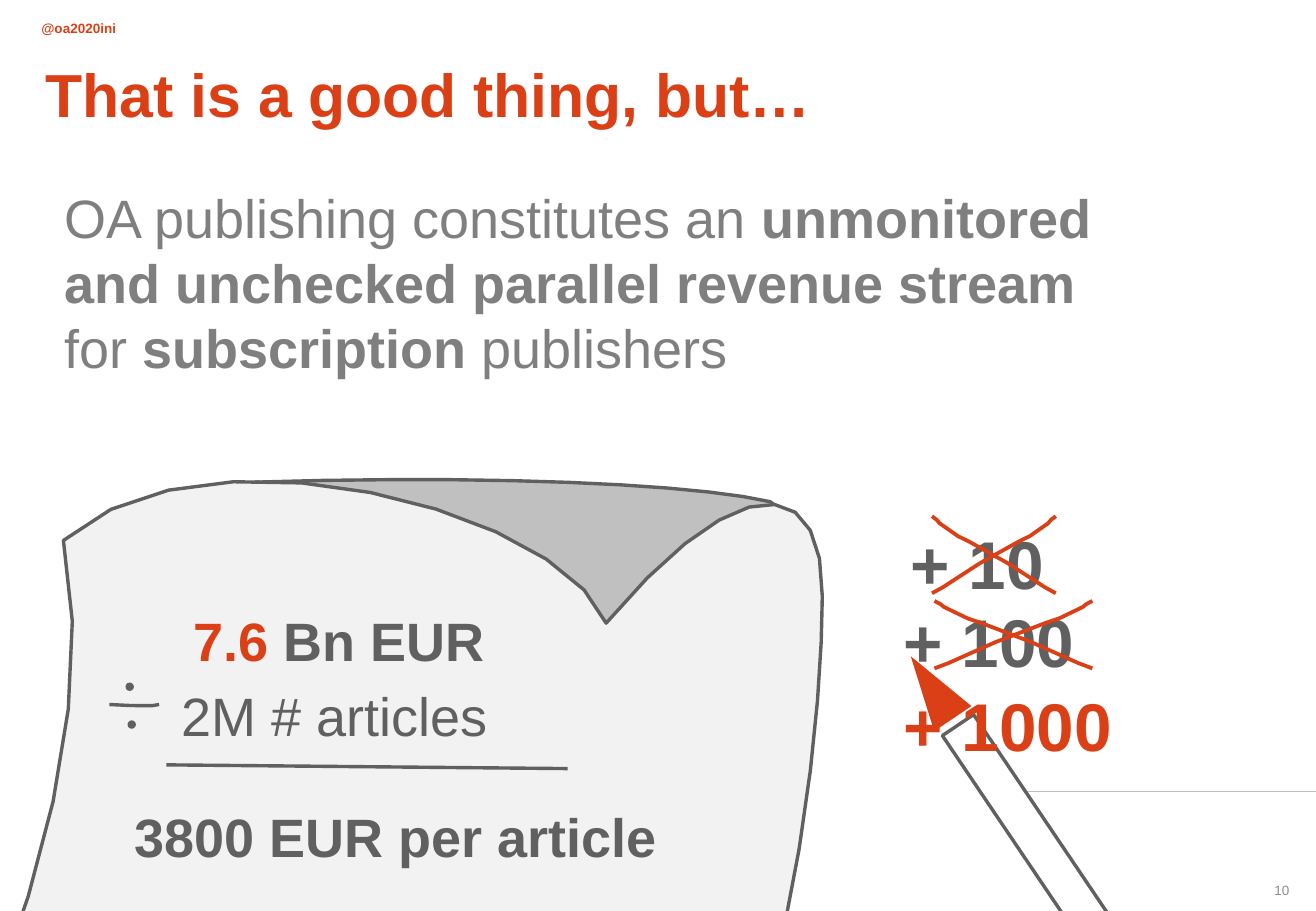
import math

import pptx
import pptx.dml.color
import pptx.enum.shapes
import pptx.enum.text
import pptx.oxml.ns
import pptx.util
from lxml import etree

Pt = pptx.util.Pt
RGBColor = pptx.dml.color.RGBColor
SHAPE = pptx.enum.shapes.MSO_SHAPE
ALIGN = pptx.enum.text.PP_ALIGN
ANCHOR = pptx.enum.text.MSO_ANCHOR

RED = RGBColor(0xDB, 0x3F, 0x16)
INK = RGBColor(0x60, 0x60, 0x60)
BODY_GREY = RGBColor(0x7F, 0x7F, 0x7F)
NUMBER_GREY = RGBColor(0x8C, 0x8C, 0x8C)
RULE_GREY = RGBColor(0xC0, 0xC0, 0xC0)
PAPER = RGBColor(0xF2, 0xF2, 0xF2)
WHITE = RGBColor(0xFF, 0xFF, 0xFF)

FLUSH = {"margin_left": 0, "margin_right": 0, "margin_top": 0, "margin_bottom": 0}

FOLD = [(151.2, 1.8), (286.6, -2.5, 410.4, 2.6, 456.5, 13.4),
        (502.6, 24.2, 432.7, 56.6, 426.2, 68.1), (403.2, 122.8), (401.8, 127.8),
        (374.4, 166.7), (366.5, 170.3), (347, 153),
        (301.7, 114.9, 278.6, 94, 228.2, 66.6),
        (132.5, 18.4), (125.3, 15.5), (104.4, 15.5)]
SHEET = [(37.6, 36.4), (69.1, 187.6, -43.9, 431.7, -133.2, 530.3), (356.4, 543.3),
         (468.7, 370.5, 487.4, 145.8, 487.4, 69.5),
         (488.2, -6.8, 434.9, -4.6, 359.3, 85.4),
         (333.4, 18.4, 119.5, -37.8, 37.6, 36.4)]
DIVISION_BAR = [(64.8, 133.6), (72.7, 134.3, 81.4, 134.3, 90, 134.3), (94.3, 133.6)]
STROKE = [(0, 1), (0.09, 0.92), (0.29, 0.73, 0.48, 0.48, 0.7, 0.33),
          (0.81, 0.25, 0.75, 0.3, 0.94, 0.09), (0.96, 0.05), (1, 0)]


def add_text(slide, box, runs, size, frame_format=None, paragraph_format=None):
    frame = slide.shapes.add_textbox(*map(Pt, box)).text_frame
    for name, value in {"word_wrap": True, **(frame_format or {})}.items():
        setattr(frame, name, value)
    paragraph = frame.paragraphs[0]
    for name, value in (paragraph_format or {}).items():
        setattr(paragraph, name, value)
    for words, color, bold in runs:
        run = paragraph.add_run()
        run.text = words.rstrip("\n")
        for name, value in {"name": "Arial", "size": Pt(size), "bold": bold}.items():
            setattr(run.font, name, value)
        run.font.color.rgb = color
        if words.endswith("\n"):
            paragraph.add_line_break()


def paint(shape, fill=None, line=None, width=2):
    shape.shadow.inherit = False
    if fill is None:
        shape.fill.background()
    else:
        shape.fill.solid()
        shape.fill.fore_color.rgb = fill
    if line is None:
        shape.line.fill.background()
    else:
        shape.line.color.rgb = line
        shape.line.width = Pt(width)


def flatten(outline):
    points = [outline[0]]
    for segment in outline[1:]:
        if len(segment) == 2:
            points.append(segment)
            continue
        start = points[-1]
        steps = max(2, min(10, round(math.dist(start, segment[4:]) / 14)))
        for t in (step / steps for step in range(1, steps + 1)):
            u = 1 - t
            points.append(tuple(
                u ** 3 * start[axis] + 3 * u * u * t * segment[axis]
                + 3 * u * t * t * segment[axis + 2] + t ** 3 * segment[axis + 4]
                for axis in (0, 1)))
    return points


def draw(slide, left, top, points, closed=False, **style):
    placed = [(Pt(left + x), Pt(top + y)) for x, y in points]
    builder = slide.shapes.build_freeform(*placed[0])
    builder.add_line_segments(placed[1:], close=closed)
    paint(builder.convert_to_shape(), **style)


def draw_rule(slide, start, end, color, width):
    rule = slide.shapes.add_connector(
        pptx.enum.shapes.MSO_CONNECTOR.STRAIGHT, *map(Pt, start + end))
    rule.line.color.rgb = color
    rule.line.width = Pt(width)
    properties = rule._element.find(pptx.oxml.ns.qn("p:spPr"))
    etree.SubElement(properties, pptx.oxml.ns.qn("a:effectLst"))


def add_frame(slide, width, height):
    add_text(slide, (24.5, 12, 60, 12.2), [("@oa2020ini", RED, True)], 8, FLUSH)
    draw_rule(slide, (602, height - 71), (width, height - 71), RULE_GREY, 0.5)
    add_text(slide, (width - 77, height - 20.9, 61.2, 13), [("10", NUMBER_GREY, False)], 8,
             {**FLUSH, "vertical_anchor": ANCHOR.BOTTOM}, {"alignment": ALIGN.RIGHT})


def add_message(slide, left, top, width):
    add_text(slide, (left, top, width, 54.7),
             [("That is a good thing, but…", RED, True)], 36)
    add_text(slide, (left + 18.2, top + 79.2, width - 18.2, 35.3),
             [("OA publishing constitutes an ", BODY_GREY, False),
              ("unmonitored\n", BODY_GREY, True),
              ("and unchecked parallel revenue stream\n", BODY_GREY, True),
              ("for ", BODY_GREY, False),
              ("subscription ", BODY_GREY, True),
              ("publishers", BODY_GREY, False)], 32, FLUSH)


def add_paper(slide, left, top):
    draw(slide, left, top, flatten(FOLD), fill=RULE_GREY, line=INK)
    draw(slide, left, top, flatten(SHEET), closed=True, fill=PAPER, line=INK)
    add_text(slide, (left + 107.5, top + 72.4, 262, 32.4),
             [("7.6 ", RED, True), ("Bn EUR", INK, True)], 32)
    add_text(slide, (left + 107.5, top + 120.6, 247.7, 38.9),
             [("2M # articles", INK, False)], 32, FLUSH)
    add_text(slide, (left + 79.9, top + 192.6, 373, 38.9),
             [("3800 EUR per article", INK, True)], 32, FLUSH)
    draw_rule(slide, (left + 98.6, top + 169.4), (left + 336.4, top + 171.6), INK, 2)
    draw(slide, left, top, flatten(DIVISION_BAR), line=INK)
    for x, y in ((74.4, 120.6), (75.6, 143)):
        dot = slide.shapes.add_shape(SHAPE.OVAL, Pt(left + x), Pt(top + y), Pt(5), Pt(5))
        paint(dot, fill=INK)


def add_pencil(slide, left, top):
    for kind, box, turn, style in (
            (SHAPE.RECTANGLE, (left + 68.6, top + 29, 22.3, 182.2), 146,
             {"fill": WHITE, "line": INK}),
            (SHAPE.ISOSCELES_TRIANGLE, (left, top, 26.6, 44.6), 326, {"fill": RED})):
        part = slide.shapes.add_shape(kind, *map(Pt, box))
        part.rotation = turn
        paint(part, **style)


def add_increases(slide, left, top):
    for words, color, x, y in (("+ 10", INK, 4.3, 0), ("+ 100", INK, 0, 46.1),
                               ("+ 1000", RED, 0, 95.8)):
        add_text(slide, (left + x, top + y, 216.7, 32.4), [(words, color, True)], 40)
    stroke = flatten(STROKE)
    for x, y, width, height in ((23.9, 0, 73.4, 45.7), (25.4, 50.2, 93.6, 40)):
        for mirrored in (False, True):
            points = [((1 - u if mirrored else u) * width, v * height) for u, v in stroke]
            draw(slide, left + x, top + y, points, line=RED, width=2.25)


def main():
    presentation = pptx.Presentation()
    presentation.slide_width = Pt(780)
    presentation.slide_height = Pt(540)
    slide = presentation.slides.add_slide(presentation.slide_layouts[6])
    add_frame(slide, 780, 540)
    add_message(slide, 20, 30.2, 700)
    add_paper(slide, 0, 284)
    add_pencil(slide, 539, 385.2)
    add_increases(slide, 528.5, 306)
    presentation.save("out.pptx")


if __name__ == "__main__":
    main()
